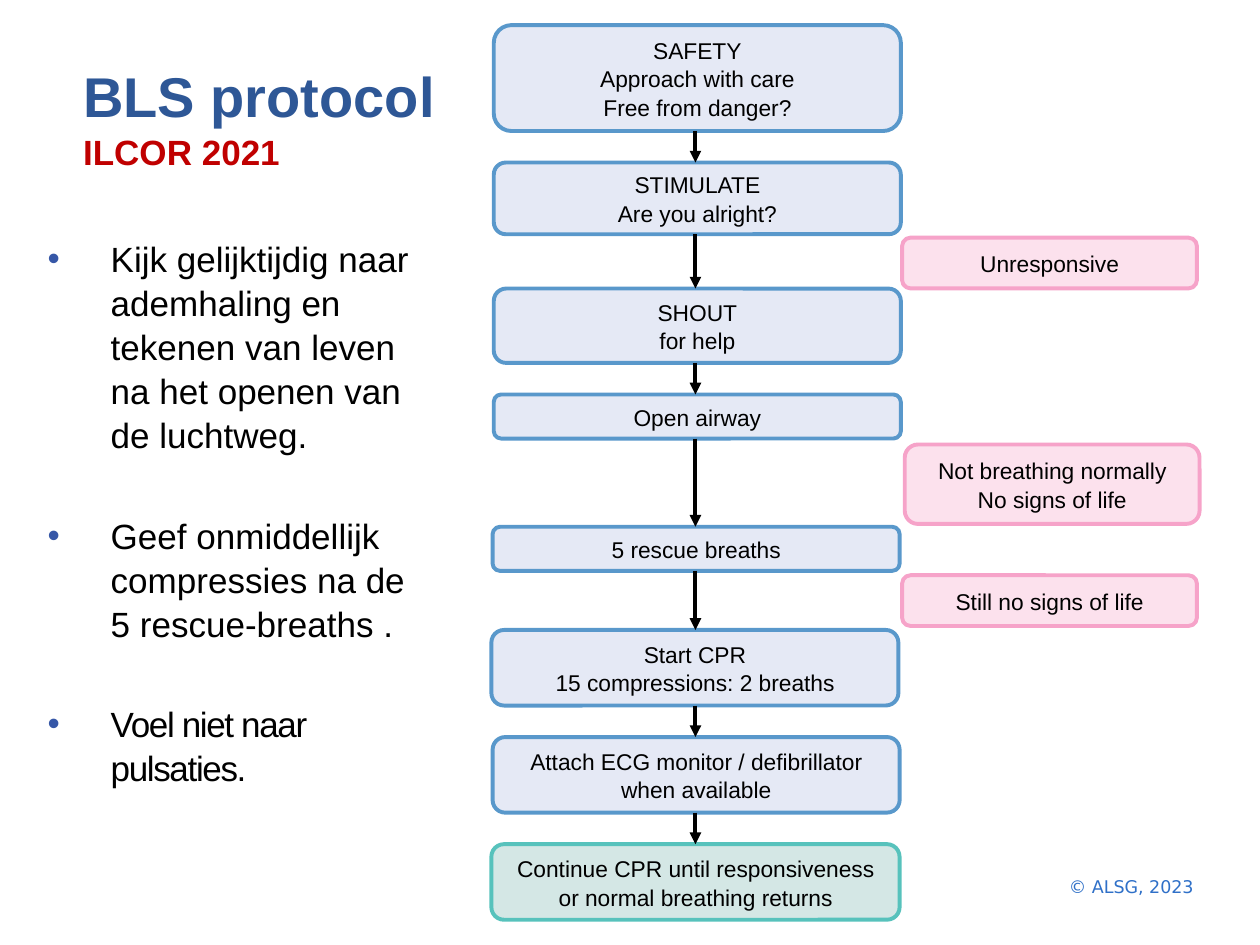
from dataclasses import dataclass
from itertools import pairwise

from lxml.etree import SubElement
from pptx import Presentation
from pptx.dml.color import RGBColor
from pptx.enum.shapes import MSO_CONNECTOR as CONN, MSO_SHAPE as SHAPE
from pptx.enum.text import MSO_ANCHOR as ANCHOR, PP_ALIGN as ALIGN
from pptx.oxml.ns import qn
from pptx.util import Pt

ARROW_X = 397.4
LINE_SPACING = 1.05
BLUE = ("E5E9F5", "5998CB")
PINK = ("FCE1ED", "F6A3C9")
GREEN = ("D4E7E5", "57C2BC")


@dataclass
class Box:
    lines: list[str]
    left: float
    top: float
    height: float
    width: float = 232.6
    colors: tuple[str, str] = BLUE


STEPS = [
    Box(["SAFETY", "Approach with care", "Free from danger?"], 282.2, 14.4, 60.5),
    Box(["STIMULATE", "Are you alright?"], 282.2, 92.9, 41),
    Box(["SHOUT", "for help"], 282.2, 164.9, 42.5),
    Box(["Open airway"], 282.2, 225.4, 25.2),
    Box(["5 rescue breaths"], 281.5, 301, 25.2),
    Box(["Start CPR", "15 compressions: 2 breaths"], 280.8, 360, 43.2),
    Box(["Attach ECG monitor / defibrillator", "when available"], 281.5, 421.2, 43.2),
    Box(["Continue CPR until responsiveness or normal breathing returns"],
        280.8, 482.4, 43.2, 233.3, GREEN),
]
FINDINGS = [
    Box(["Unresponsive"], 515.5, 135.8, 29, 168.5, PINK),
    Box(["Not breathing normally", "No signs of life"], 517, 254, 45.4, 168.5, PINK),
    Box(["Still no signs of life"], 515.5, 328.7, 29, 168.5, PINK),
]
# Text and letter spacing in hundredths of a point
BULLETS = [
    ("Kijk gelijktijdig naar ademhaling en tekenen van leven na het openen van de luchtweg.", 0),
    ("Geef onmiddellijk compressies na de 5 rescue-breaths .", 0),
    ("Voel niet naar pulsaties.", -80),
]


def rgb(value: str) -> RGBColor:
    return RGBColor.from_string(value)


def set_font(font, size: float, color: str, name: str = "Arial", bold: bool = False) -> None:
    for key, value in {"size": Pt(size), "name": name, "bold": bold}.items():
        setattr(font, key, value)
    font.color.rgb = rgb(color)


def set_frame(tf, anchor, **margins: float) -> None:
    for key, value in {"word_wrap": True, "vertical_anchor": anchor}.items():
        setattr(tf, key, value)
    for side, value in margins.items():
        setattr(tf, f"margin_{side}", Pt(value))


def add_box(s, box: Box) -> None:
    sp = s.shapes.add_shape(SHAPE.ROUNDED_RECTANGLE, Pt(box.left), Pt(box.top),
                            Pt(box.width), Pt(box.height))
    fill, line = box.colors
    sp.shadow.inherit = False
    sp.fill.solid()
    sp.fill.fore_color.rgb = rgb(fill)
    sp.line.color.rgb = rgb(line)
    sp.line.width = Pt(2.25)
    tf = sp.text_frame
    set_frame(tf, ANCHOR.MIDDLE)
    tf.text = "\n".join(box.lines)
    for p in tf.paragraphs:
        p.alignment = ALIGN.CENTER
        p.line_spacing = LINE_SPACING
        set_font(p.runs[0].font, 13, "000000")


def add_arrow(s, start: float, end: float) -> None:
    line = s.shapes.add_connector(CONN.STRAIGHT, Pt(ARROW_X), Pt(start), Pt(ARROW_X), Pt(end))
    line.line.color.rgb = rgb("000000")
    line.line.width = Pt(2.25)
    SubElement(line.line._get_or_add_ln(), qn("a:tailEnd"), type="triangle")
    SubElement(line._element.spPr, qn("a:effectLst"))


def add_title(s) -> None:
    title = s.shapes.title
    place = {"left": 42.5, "top": 28.1, "width": 243.4, "height": 90.7}
    for key, value in place.items():
        setattr(title, key, Pt(value))
    tf = title.text_frame
    set_frame(tf, ANCHOR.TOP, left=5, top=5, right=5, bottom=5)
    p = tf.paragraphs[0]
    p.alignment = ALIGN.LEFT
    p.line_spacing = LINE_SPACING
    r = p.add_run()
    r.text = "BLS protocol"
    set_font(r.font, 32, "2E5796", bold=True)
    p.add_line_break()
    r = p.add_run()
    r.text = "ILCOR 2021"
    set_font(r.font, 20, "C00000", bold=True)


def add_bullets(s) -> None:
    tf = s.shapes.add_textbox(Pt(20.2), Pt(131), Pt(232.6), Pt(351.4)).text_frame
    set_frame(tf, ANCHOR.TOP)
    for i, (text, spacing) in enumerate(BULLETS):
        p = tf.paragraphs[0] if i == 0 else tf.add_paragraph()
        p.line_spacing = LINE_SPACING
        p.space_before = Pt(32 if i else 0)
        pPr = p._p.get_or_add_pPr()
        pPr.set("marL", str(Pt(36)))
        pPr.set("indent", str(-Pt(36)))
        SubElement(SubElement(pPr, qn("a:buClr")), qn("a:srgbClr"), val="3657A7")
        SubElement(pPr, qn("a:buFont"), typeface="Arial")
        SubElement(pPr, qn("a:buChar"), char="•")
        r = p.add_run()
        r.text = text
        set_font(r.font, 20, "000000")
        if spacing:
            r._r.get_or_add_rPr().set("spc", str(spacing))


def add_copyright(s) -> None:
    tf = s.shapes.add_textbox(Pt(456.5), Pt(496.8), Pt(232.6), Pt(19.4)).text_frame
    set_frame(tf, ANCHOR.TOP)
    p = tf.paragraphs[0]
    p.alignment = ALIGN.RIGHT
    r = p.add_run()
    r.text = "© ALSG, 2023"
    set_font(r.font, 10, "2F70C8", "DejaVu Sans")


def main() -> None:
    prs = Presentation()
    prs.slide_width, prs.slide_height = Pt(720), Pt(540)
    s = prs.slides.add_slide(prs.slide_layouts[5])

    # Text column
    add_title(s)
    add_bullets(s)
    add_copyright(s)

    # Flow chart: findings, steps and the arrows between steps
    for box in FINDINGS + STEPS:
        add_box(s, box)
    for upper, lower in pairwise(STEPS):
        add_arrow(s, upper.top + upper.height, lower.top)

    prs.save("out.pptx")


if __name__ == "__main__":
    main()
